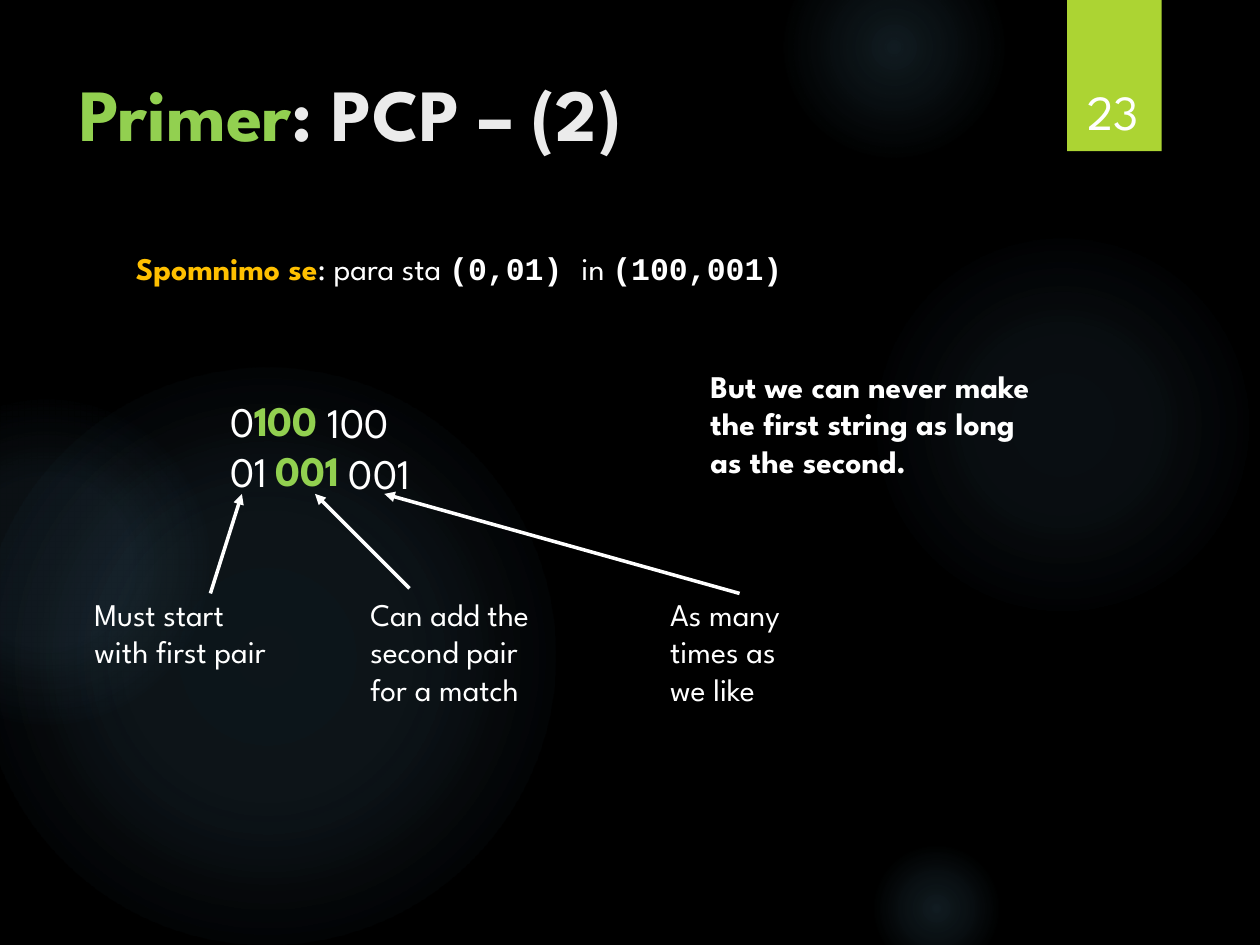
import pptx
import pptx.dml.color
import pptx.enum.shapes
import pptx.enum.text
import pptx.oxml
import pptx.oxml.ns
import pptx.util
from pptx.util import Inches

SANS, MONO = "League Spartan", "Courier New"
WHITE, GREEN, AMBER, LIME, GLOW = "FFFFFF", "92D050", "FFC000", "ACD433", "7AC4F0"

GLOWS = [
    (6.89, 1.83, 3.08, [(0, 7), (36, 6), (69, 0)]),
    (6.22, -0.5, 1.75, [(0, 14), (36, 7), (73, 0)]),
    (6.89, 6.67, 1.08, [(0, 14), (36, 7), (66, 0)]),
    (-0.17, 2.92, 4.58, [(0, 11), (36, 10), (75, 0)]),
    (-0.92, 3.17, 2.58, [(0, 8), (36, 8), (72, 0)]),
]
TITLE = [[("Primer", {"color": GREEN}), (": PCP – (2)", {"color": "EBEBEB"})]]
REMINDER = [[
    ("Spomnimo se", {"color": AMBER, "bold": True}),
    (": para sta ", {}),
    ("(0,01) ", {"name": MONO, "bold": True}),
    ("in ", {}),
    ("(100,001)", {"name": MONO, "bold": True}),
]]
CONCLUSION = ["But we can never make", "the first string as long", "as the second."]
STEPS = [
    {"pair": ["0", "01"], "pair_box": (1.73, 3.09, 0.57, 0.91), "indent": 0,
     "style": {}, "note": ["Must start", "with first pair"],
     "note_box": (0.65, 4.67, 1.8, 0.71), "arrow": (1.67, 4.71, 1.92, 3.92)},
    {"pair": ["100", "001"], "pair_box": (1.92, 3.08, 0.96, 0.91), "indent": 0.17,
     "style": {"color": GREEN, "bold": True},
     "note": ["Can add the", "second pair", "for a match"],
     "note_box": (2.84, 4.67, 1.99, 1.3), "arrow": (3.25, 4.67, 2.5, 3.92)},
    {"pair": ["100", "001"], "pair_box": (2.5, 3.1, 0.94, 0.91), "indent": 0.17,
     "style": {}, "note": ["As many", "times as", "we like"],
     "note_box": (5.22, 4.67, 1.53, 1.3), "arrow": (5.87, 4.71, 3.05, 3.92)},
]


def rgb(value):
    return pptx.dml.color.RGBColor.from_string(value)


def drawing(tag, attributes="", inner=""):
    return pptx.oxml.parse_xml(
        f'<a:{tag} {pptx.oxml.ns.nsdecls("a")} {attributes}>{inner}</a:{tag}>')


def write(frame, lines, anchor="TOP", align="LEFT", **base):
    frame.word_wrap = True
    frame.auto_size = pptx.enum.text.MSO_AUTO_SIZE.NONE
    frame.vertical_anchor = getattr(pptx.enum.text.MSO_ANCHOR, anchor)
    for index, line in enumerate(lines):
        paragraph = frame.paragraphs[0] if index == 0 else frame.add_paragraph()
        paragraph.alignment = getattr(pptx.enum.text.PP_ALIGN, align)
        for text, style in [(line, {})] if isinstance(line, str) else line:
            run = paragraph.add_run()
            run.text = text
            values = {"name": SANS, "size": 18, "color": WHITE, "bold": False, **base, **style}
            run.font.color.rgb = rgb(values.pop("color"))
            values["size"] = pptx.util.Pt(values["size"])
            for key, value in values.items():
                setattr(run.font, key, value)


def add_text(shapes, box, lines, **options):
    frame = shapes.add_textbox(*map(Inches, box)).text_frame
    write(frame, lines, **options)
    return frame


def add_glow(shapes, left, top, size, stops):
    glow = shapes.add_shape(pptx.enum.shapes.MSO_SHAPE.OVAL,
                            *map(Inches, (left, top, size, size)))
    glow.shadow.inherit = False
    glow.line.fill.background()
    glow.fill.background()
    colours = "".join(
        f'<a:gs pos="{position * 1000}"><a:srgbClr val="{GLOW}">'
        f'<a:alpha val="{alpha * 1000}"/></a:srgbClr></a:gs>' for position, alpha in stops)
    centre = '<a:fillToRect l="50000" t="50000" r="50000" b="50000"/>'
    gradient = drawing("gradFill", 'rotWithShape="1"',
                       f'<a:gsLst>{colours}</a:gsLst><a:path path="circle">{centre}</a:path>')
    properties = glow._element.spPr
    properties.replace(properties.find(pptx.oxml.ns.qn("a:noFill")), gradient)


def add_arrow(shapes, ends):
    arrow = shapes.add_connector(pptx.enum.shapes.MSO_CONNECTOR.STRAIGHT, *map(Inches, ends))
    arrow.line.color.rgb = rgb(WHITE)
    arrow.line.width = pptx.util.Pt(2)
    arrow.line._get_or_add_ln().append(drawing("tailEnd", 'type="triangle"'))
    arrow._element.spPr.append(drawing("effectLst"))


def add_page_tab(shapes):
    tab = shapes.add_shape(pptx.enum.shapes.MSO_SHAPE.RECTANGLE,
                           *map(Inches, (8.47, 0, 0.75, 1.2)))
    tab.fill.solid()
    tab.fill.fore_color.rgb = rgb(LIME)
    tab.line.fill.background()
    tab.shadow.inherit = False
    tab._element.spPr.find(pptx.oxml.ns.qn("a:effectLst")).append(drawing(
        "outerShdw", 'blurRad="38100" dist="25400" dir="5400000" rotWithShape="0"',
        '<a:srgbClr val="000000"><a:alpha val="45000"/></a:srgbClr>'))
    add_text(shapes, (8.49, 0.32, 0.69, 0.84), ["23"], anchor="BOTTOM", align="CENTER", size=28)


def add_step(shapes, step):
    group = shapes.add_group_shape().shapes
    pair = add_text(group, step["pair_box"], step["pair"], size=24, **step["style"])
    if step["indent"]:
        second = pair.paragraphs[1]._p.get_or_add_pPr()
        second.set("marL", str(Inches(step["indent"])))
        second.set("indent", "0")
    add_text(group, step["note_box"], step["note"])
    add_arrow(group, step["arrow"])


def main():
    deck = pptx.Presentation()
    deck.slide_width, deck.slide_height = Inches(10), Inches(7.5)
    slide = deck.slides.add_slide(deck.slide_layouts[5])
    shapes = slide.shapes
    slide.background.fill.solid()
    slide.background.fill.fore_color.rgb = rgb("000000")
    for glow in GLOWS:
        add_glow(shapes, *glow)
    add_page_tab(shapes)

    title = shapes.title
    for side, value in {"left": 0.53, "top": 0.49, "width": 7.72, "height": 1.53}.items():
        setattr(title, side, Inches(value))
    write(title.text_frame, TITLE, size=42, bold=True)

    add_text(shapes, (0.98, 1.93, 5.68, 0.4), REMINDER)
    for step in STEPS:
        add_step(shapes, step)
    add_text(shapes, (5.54, 2.86, 3.11, 1.01), CONCLUSION, bold=True)
    deck.save("out.pptx")


if __name__ == "__main__":
    main()
